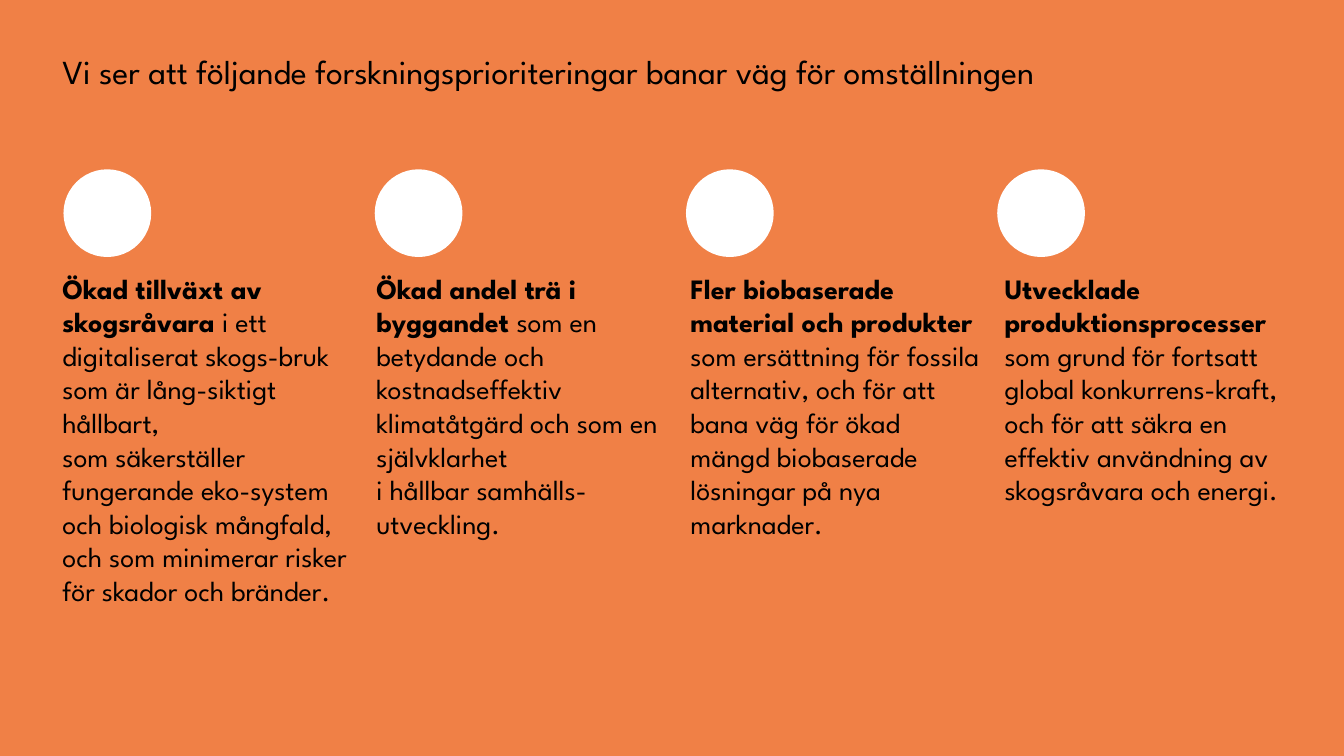
"""Build a slide with four research priorities for the transition."""
from pptx import Presentation
from pptx.dml.color import RGBColor
from pptx.enum.shapes import MSO_SHAPE
from pptx.util import Inches, Pt

RECTANGLE = MSO_SHAPE.RECTANGLE
OVAL = MSO_SHAPE.OVAL
ORANGE = RGBColor(0xF0, 0x80, 0x46)
WHITE = RGBColor(0xFF, 0xFF, 0xFF)
BLACK = RGBColor(0, 0, 0)
FONT = "League Spartan"

TITLE = "Vi ser att följande forskningsprioriteringar banar väg för omställningen"
PRIORITIES = [
    ("Ökad tillväxt av skogsråvara ",
     ["i ett digitaliserat skogs-bruk som är lång-siktigt hållbart, ",
      "som säkerställer fungerande eko-system och biologisk mångfald, "
      "och som minimerar risker för skador och bränder."], 3.8),
    ("Ökad andel trä i byggandet ",
     ["som en betydande och kostnadseffektiv klimatåtgärd och som en självklarhet ",
      "i hållbar samhälls-utveckling."], 2.79),
    ("Fler biobaserade material och produkter ",
     ["som ersättning för fossila alternativ, och för att bana väg för ökad "
      "mängd biobaserade lösningar på nya marknader."], 3.13),
    ("Utvecklade produktionsprocesser ",
     ["som grund för fortsatt global konkurrens-kraft, och för att säkra en "
      "effektiv användning av skogsråvara och energi."], 3.13),
]

SLIDE_WIDTH, SLIDE_HEIGHT = 13.33, 7.5
TEXT_LEFT, TEXT_TOP, TEXT_WIDTH, TEXT_PITCH = 0.52, 2.64, 3.13, 3.115
CIRCLE_LEFT, CIRCLE_TOP, CIRCLE_SIZE, CIRCLE_PITCH = 0.63, 1.68, 0.87, 3.087


def add_filled_shape(slide, kind, left, top, width, height, color):
    shape = slide.shapes.add_shape(
        kind, Inches(left), Inches(top), Inches(width), Inches(height))
    shape.shadow.inherit = False
    shape.fill.solid()
    shape.fill.fore_color.rgb = color
    shape.line.fill.background()


def add_paragraph_box(slide, left, top, width, height):
    box = slide.shapes.add_textbox(
        Inches(left), Inches(top), Inches(width), Inches(height))
    box.text_frame.word_wrap = True
    return box.text_frame.paragraphs[0]


def add_text(paragraph, text, size, bold=False):
    run = paragraph.add_run()
    run.text = text
    run.font.name = FONT
    run.font.size = Pt(size)
    run.font.bold = bold
    run.font.color.rgb = BLACK


def add_priority(slide, column, heading, lines, height):
    paragraph = add_paragraph_box(
        slide, TEXT_LEFT + column * TEXT_PITCH, TEXT_TOP, TEXT_WIDTH, height)
    add_text(paragraph, heading, 20, bold=True)
    for index, line in enumerate(lines):
        if index:
            paragraph.add_line_break()
        add_text(paragraph, line, 20)
    add_filled_shape(slide, OVAL, CIRCLE_LEFT + column * CIRCLE_PITCH,
                     CIRCLE_TOP, CIRCLE_SIZE, CIRCLE_SIZE, WHITE)


def main():
    presentation = Presentation()
    presentation.slide_width = Inches(SLIDE_WIDTH)
    presentation.slide_height = Inches(SLIDE_HEIGHT)
    slide = presentation.slides.add_slide(presentation.slide_layouts[6])
    add_filled_shape(slide, RECTANGLE, 0, 0, SLIDE_WIDTH, SLIDE_HEIGHT, ORANGE)
    add_text(add_paragraph_box(slide, TEXT_LEFT, 0.46, 11.39, 0.5), TITLE, 24)
    for column, (heading, lines, height) in enumerate(PRIORITIES):
        add_priority(slide, column, heading, lines, height)
    presentation.save("out.pptx")


if __name__ == "__main__":
    main()
